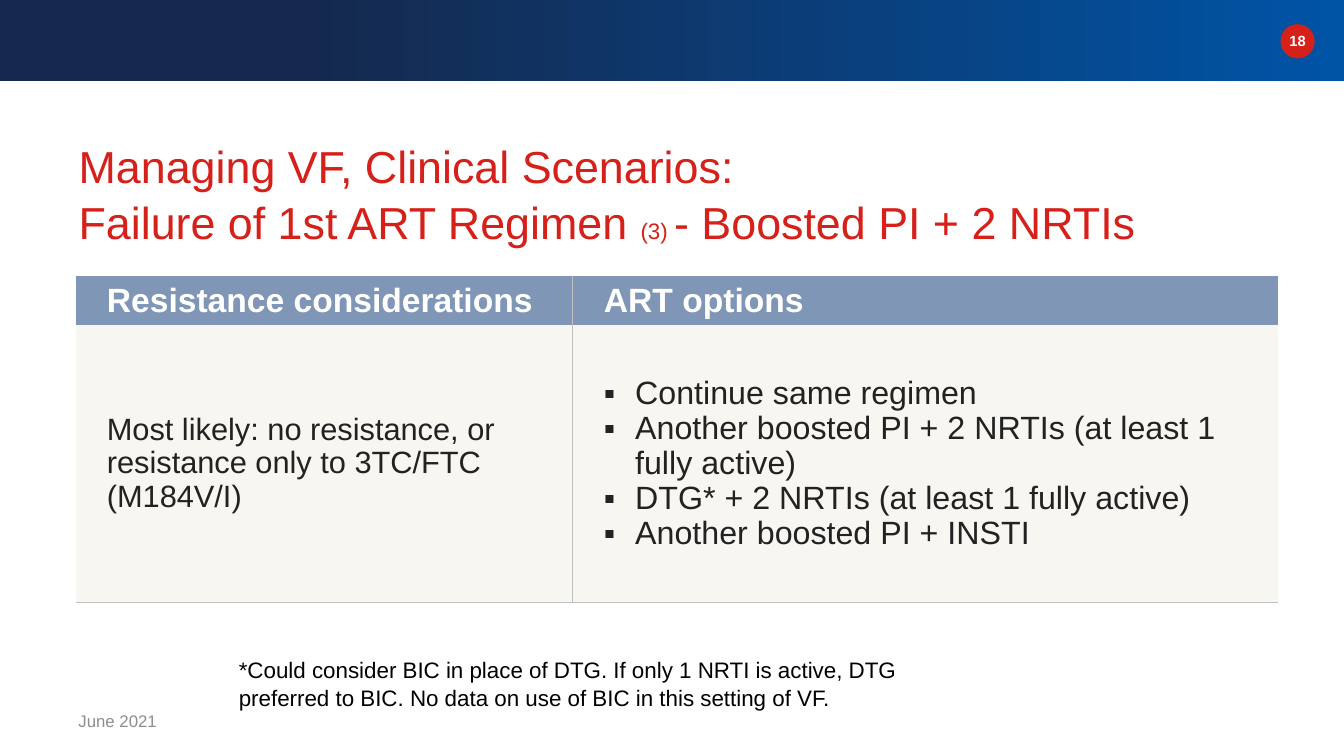
"""Build the slide on failure of a boosted PI first regimen."""
from dataclasses import dataclass
from typing import Any

from lxml import etree
from pptx import Presentation
from pptx import util as u
from pptx.dml.color import RGBColor
from pptx.enum import shapes, text
from pptx.oxml import ns

NAVY = RGBColor(0x15, 0x29, 0x4E)
BLUE = RGBColor(0x00, 0x54, 0xA6)
RED = RGBColor(0xD6, 0x20, 0x1A)
WHITE = RGBColor(0xFF, 0xFF, 0xFF)
BLACK = RGBColor(0x00, 0x00, 0x00)
GRAY = RGBColor(0x8D, 0x8D, 0x8D)
INK = RGBColor(0x22, 0x22, 0x22)
HEADER = RGBColor(0x80, 0x96, 0xB6)
CREAM = RGBColor(0xF8, 0xF6, 0xF0)
RULE = RGBColor(0xBF, 0xBF, 0xBF)
FONT = "Arial"
NO_STYLE = "{2D5ABB26-0587-4C30-8999-92F81FD0307C}"
MIDDLE = text.MSO_ANCHOR.MIDDLE
TOP = text.MSO_ANCHOR.TOP
LEFT = text.PP_ALIGN.LEFT
CENTER = text.PP_ALIGN.CENTER


@dataclass
class Label:
    words: str
    place: tuple[float, float, float, float]
    size: float
    color: RGBColor
    bold: bool = False
    align: Any = LEFT
    anchor: Any = TOP
    spacing: float = 1.0


@dataclass
class Entry:
    row: int
    column: int
    lines: list[str]
    size: float
    color: RGBColor
    fill: RGBColor
    spacing: float
    borders: tuple[str, ...]
    bold: bool = False
    bullet: str = ""


LABELS = [
    Label("18", (12.65, 0.27, 0.44, 0.28), 10.5, WHITE, bold=True, align=CENTER),
    Label("June 2021", (0.68, 6.95, 3, 0.4), 12, GRAY, anchor=MIDDLE),
    Label("*Could consider BIC in place of DTG. If only 1 NRTI is active, DTG "
          "preferred to BIC. No data on use of BIC in this setting of VF.",
          (2.27, 6.45, 7.22, 0.64), 16, BLACK, spacing=1.05),
]
ENTRIES = [
    Entry(0, 0, ["Resistance considerations"], 24, WHITE, HEADER, 1.02, ("lnR",), bold=True),
    Entry(0, 1, ["ART options"], 24, WHITE, HEADER, 1.02, ("lnL",), bold=True),
    Entry(1, 0, ["Most likely: no resistance, or resistance only to 3TC/FTC (M184V/I)"],
          22, INK, CREAM, 0.97, ("lnR", "lnB")),
    Entry(1, 1, ["Continue same regimen",
                 "Another boosted PI + 2 NRTIs (at least 1 fully active)",
                 "DTG* + 2 NRTIs (at least 1 fully active)",
                 "Another boosted PI + INSTI"],
          23, INK, CREAM, 0.97, ("lnL", "lnB"), bullet="▪"),
]
TITLE_SPANS = [
    ("Managing VF, Clinical Scenarios: \vFailure of 1st ART Regimen ", 32),
    ("(3) ", 16),
    ("- Boosted PI + 2 NRTIs", 32),
]


def apply(target: Any, values: dict[str, Any]) -> None:
    """Set each named attribute on the target."""
    for name, value in values.items():
        setattr(target, name, value)


def set_font(font: Any, size: float, color: RGBColor, bold: bool = False) -> None:
    """Give a font its face, size, weight and colour."""
    apply(font, {"name": FONT, "size": u.Pt(size), "bold": bold})
    font.color.rgb = color


def inches(place: tuple[float, ...]) -> list[u.Length]:
    """Turn plain numbers into lengths."""
    return [u.Inches(value) for value in place]


def add_banner(page: Any) -> None:
    """Draw the gradient band and the page number disc."""
    band = page.shapes.add_shape(shapes.MSO_SHAPE.RECTANGLE, *inches((0, 0, 13.33, 0.8)))
    band.fill.gradient()
    band.fill.gradient_angle = 0
    for stop, position, color in zip(band.fill.gradient_stops, (0.23, 1), (NAVY, BLUE)):
        stop.position = position
        stop.color.rgb = color
    disc = page.shapes.add_shape(shapes.MSO_SHAPE.OVAL, *inches((12.7, 0.24, 0.34, 0.34)))
    disc.fill.solid()
    disc.fill.fore_color.rgb = RED
    for shape in (band, disc):
        shape.line.fill.background()
        shape.shadow.inherit = False


def add_title(page: Any) -> None:
    """Fill and place the title placeholder."""
    title = page.shapes.title
    places = inches((0.68, 1.3, 11.5, 1.39))
    apply(title, dict(zip(("left", "top", "width", "height"), places)))
    apply(title.text_frame, {"vertical_anchor": TOP, "word_wrap": True,
                             "auto_size": text.MSO_AUTO_SIZE.NONE})
    para = title.text_frame.paragraphs[0]
    apply(para, {"alignment": LEFT, "line_spacing": 1.05})
    for words, size in TITLE_SPANS:
        for index, part in enumerate(words.split("\v")):
            if index:
                para.add_line_break()
            span = para.add_run()
            span.text = part
            set_font(span.font, size, RED)


def add_label(page: Any, label: Label) -> None:
    """Add one text box."""
    box = page.shapes.add_textbox(*inches(label.place))
    apply(box.text_frame, {"word_wrap": True, "vertical_anchor": label.anchor})
    para = box.text_frame.paragraphs[0]
    apply(para, {"text": label.words, "alignment": label.align,
                 "line_spacing": label.spacing})
    set_font(para.runs[0].font, label.size, label.color, label.bold)


def add_bullet(para: Any, mark: str) -> None:
    """Give a paragraph a hanging bullet."""
    indent = u.Inches(0.31)
    settings = para._p.get_or_add_pPr()
    settings.set("marL", str(indent))
    settings.set("indent", str(-indent))
    color = etree.SubElement(settings, ns.qn("a:buClr"))
    etree.SubElement(color, ns.qn("a:srgbClr"), val=str(INK))
    etree.SubElement(settings, ns.qn("a:buFont"), typeface=FONT)
    etree.SubElement(settings, ns.qn("a:buChar"), char=mark)


def add_borders(cell: Any, sides: tuple[str, ...]) -> None:
    """Draw thin rules on the given sides of a cell."""
    settings = cell._tc.get_or_add_tcPr()
    for index, side in enumerate(sides):
        line = etree.Element(ns.qn(f"a:{side}"), w=str(u.Pt(1)))
        fill = etree.SubElement(line, ns.qn("a:solidFill"))
        etree.SubElement(fill, ns.qn("a:srgbClr"), val=str(RULE))
        settings.insert(index, line)


def fill_cell(cell: Any, entry: Entry) -> None:
    """Write and format one table cell."""
    apply(cell, {"margin_left": u.Inches(0.31), "margin_right": u.Inches(0.31),
                 "margin_top": u.Inches(0.05), "margin_bottom": u.Inches(0.05),
                 "vertical_anchor": MIDDLE})
    cell.fill.solid()
    cell.fill.fore_color.rgb = entry.fill
    add_borders(cell, entry.borders)
    cell.text_frame.text = "\n".join(entry.lines)
    for para in cell.text_frame.paragraphs:
        para.line_spacing = entry.spacing
        if entry.bullet:
            add_bullet(para, entry.bullet)
        set_font(para.runs[0].font, entry.size, entry.color, entry.bold)


def add_options_table(page: Any) -> None:
    """Add the table of resistance considerations and options."""
    frame = page.shapes.add_table(2, 2, *inches((0.75, 2.74, 11.93, 3.25)))
    for style in frame.element.iter(ns.qn("a:tableStyleId")):
        style.text = NO_STYLE
    table = frame.table
    table.horz_banding = False
    for column, width in zip(table.columns, inches((4.93, 7))):
        column.width = width
    for row, height in zip(table.rows, inches((0.48, 2.76))):
        row.height = height
    for entry in ENTRIES:
        fill_cell(table.cell(entry.row, entry.column), entry)


def main() -> None:
    """Build and save the deck."""
    deck = Presentation()
    apply(deck, {"slide_width": u.Inches(13.33), "slide_height": u.Inches(7.5)})
    page = deck.slides.add_slide(deck.slide_layouts[5])
    add_banner(page)
    add_title(page)
    add_options_table(page)
    for label in LABELS:
        add_label(page, label)
    deck.save("out.pptx")


if __name__ == "__main__":
    main()
